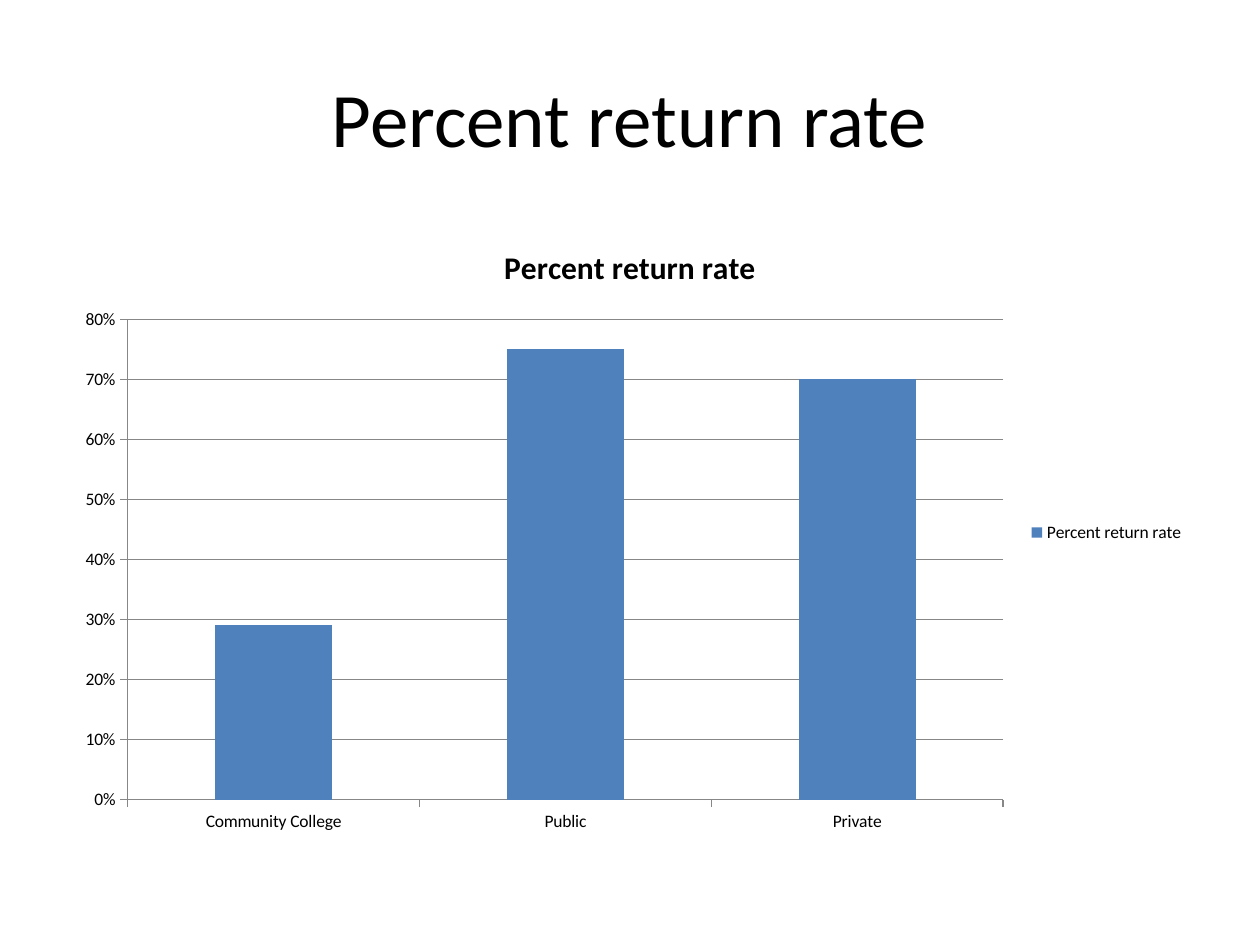
from pptx import Presentation
from pptx.chart.data import CategoryChartData
from pptx.dml.color import RGBColor
from pptx.enum.chart import XL_CHART_TYPE as ChartType
from pptx.enum.chart import XL_LEGEND_POSITION as LegendPosition
from pptx.enum.chart import XL_TICK_MARK as TickMark
from pptx.enum.text import MSO_ANCHOR as Anchor
from pptx.enum.text import PP_ALIGN as Align
from pptx.util import Cm, Pt

COLORS = {"text": "000000", "bar": "4F81BD", "line": "878787"}
FONT = "Calibri"
HEADING = "Percent return rate"


def write_text(text_frame, text, size, bold=False, color="text", align=Align.CENTER):
    paragraph = text_frame.paragraphs[0]
    paragraph.alignment = align
    run = paragraph.add_run()
    run.text = text
    run.font.name = FONT
    run.font.size = Pt(size)
    run.font.bold = bold
    run.font.color.rgb = RGBColor.from_string(COLORS[color])


presentation = Presentation()
presentation.slide_width = Cm(25.4)
presentation.slide_height = Cm(19.05)
slide = presentation.slides.add_slide(presentation.slide_layouts[6])

# Slide title
margin = Cm(1.27)
content_width = presentation.slide_width - 2 * margin
title_box = slide.shapes.add_textbox(margin, Cm(0.76), content_width, Cm(3.18))
title_box.text_frame.word_wrap = True
title_box.text_frame.vertical_anchor = Anchor.MIDDLE
write_text(title_box.text_frame, HEADING, size=44)

# Column chart
chart_data = CategoryChartData(number_format="0%")
chart_data.categories = ["Community College", "Public", "Private"]
chart_data.add_series(HEADING, [0.29, 0.75, 0.7])
chart = slide.shapes.add_chart(
    ChartType.COLUMN_CLUSTERED, margin, Cm(4.45), content_width, Cm(12.57), chart_data
).chart
chart.font.name = FONT
chart.font.size = Pt(10)
chart.font.color.rgb = RGBColor.from_string(COLORS["text"])
chart.has_title = True
write_text(chart.chart_title.text_frame, HEADING, size=18, bold=True)
chart.chart_title.include_in_layout = False

# Bars
plot = chart.plots[0]
plot.gap_width = 150
plot.vary_by_categories = False
bar_fill = plot.series[0].format.fill
bar_fill.solid()
bar_fill.fore_color.rgb = RGBColor.from_string(COLORS["bar"])

# Axes and gridlines
value_axis = chart.value_axis
value_axis.minimum_scale = 0
value_axis.maximum_scale = 0.8
value_axis.major_unit = 0.1
value_axis.has_major_gridlines = True
value_axis.tick_labels.number_format = "0%"
value_axis.tick_labels.number_format_is_linked = False
for axis in (chart.category_axis, value_axis):
    axis.major_tick_mark = TickMark.OUTSIDE
    axis.minor_tick_mark = TickMark.NONE
for lined_part in (chart.category_axis, value_axis, value_axis.major_gridlines):
    lined_part.format.line.width = Pt(0.75)
    lined_part.format.line.color.rgb = RGBColor.from_string(COLORS["line"])

# Legend
chart.has_legend = True
chart.legend.position = LegendPosition.RIGHT
chart.legend.include_in_layout = False

presentation.save("out.pptx")
